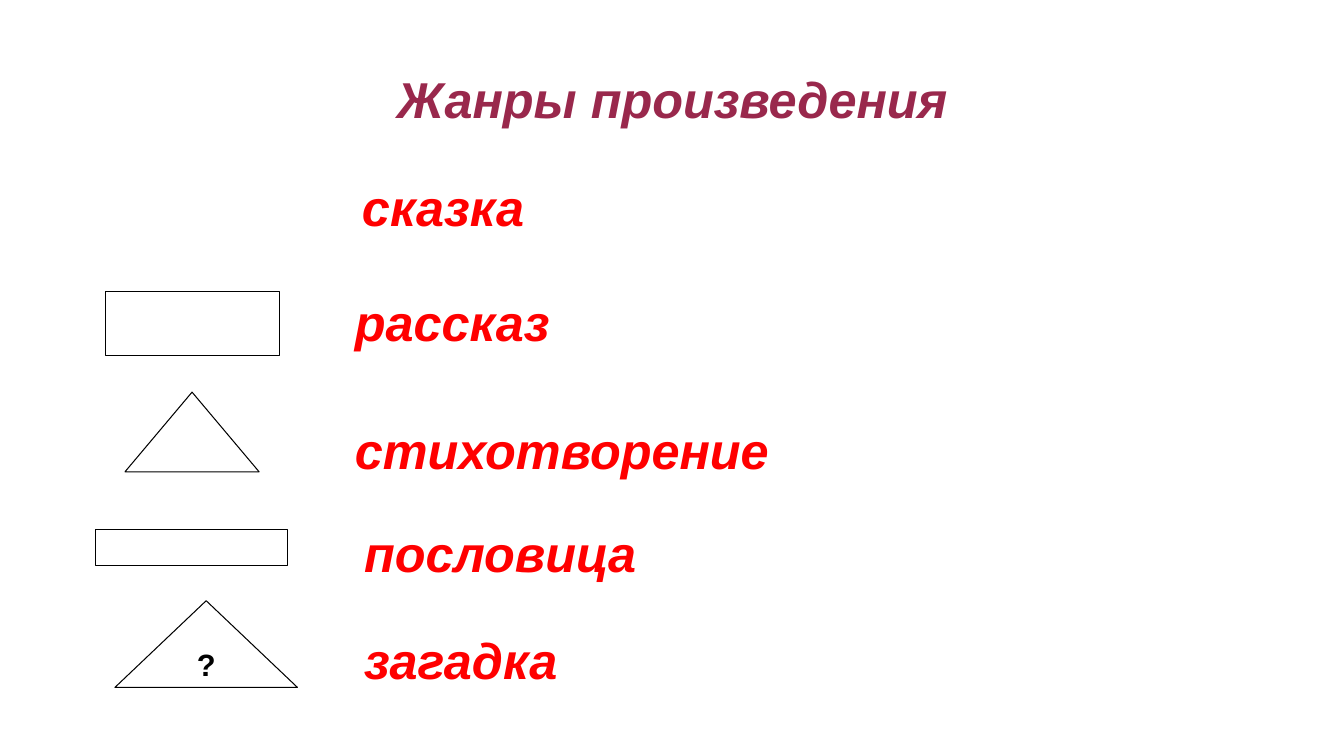
import pptx
import pptx.util
import pptx.dml.color
import pptx.enum.shapes
import pptx.enum.text

Inches = pptx.util.Inches
Pt = pptx.util.Pt
KIND = pptx.enum.shapes.MSO_SHAPE
ALIGN = pptx.enum.text.PP_ALIGN
ANCHOR = pptx.enum.text.MSO_ANCHOR

GENRES = [
    ("сказка", (3.5, 1.75, 2.98, 0.65), None, None, ""),
    ("рассказ", (3.43, 2.89, 3.24, 0.65), KIND.RECTANGLE, (1.05, 2.89, 1.72, 0.64), ""),
    ("стихотворение", (3.43, 4.16, 6, 0.65), KIND.ISOSCELES_TRIANGLE, (1.24, 3.89, 1.33, 0.79), ""),
    ("пословица", (3.52, 5.18, 4.38, 0.65), KIND.RECTANGLE, (0.95, 5.25, 1.9, 0.36), ""),
    ("загадка", (3.52, 6.25, 3.81, 0.65), KIND.ISOSCELES_TRIANGLE, (1.14, 5.96, 1.81, 0.86), "?"),
]


def color(code):
    return pptx.dml.color.RGBColor.from_string(code)


def place(box):
    return [Inches(side) for side in box]


def write(frame, text, size, code, italic=True, align=ALIGN.LEFT,
          anchor=ANCHOR.TOP, pad=(0.09, 0.05)):
    frame.word_wrap = True
    frame.vertical_anchor = anchor
    frame.margin_left = frame.margin_right = Inches(pad[0])
    frame.margin_top = frame.margin_bottom = Inches(pad[1])
    line = frame.paragraphs[0]
    line.text = text
    line.alignment = align
    line.line_spacing = 0.93
    font = line.font
    font.name = "Arial"
    font.size = Pt(size)
    font.bold = True
    font.italic = italic
    font.color.rgb = color(code)


def add_title(slide, box):
    frame = slide.shapes.add_textbox(*place(box)).text_frame
    write(frame, "Жанры произведения", 36, "99284C", align=ALIGN.CENTER,
          anchor=ANCHOR.MIDDLE, pad=(0, 0))


def add_sign(slide, kind, box, mark):
    sign = slide.shapes.add_shape(kind, *place(box))
    sign.shadow.inherit = False
    sign.fill.solid()
    sign.fill.fore_color.rgb = color("FFFFFF")
    sign.line.color.rgb = color("000000")
    sign.line.width = Pt(0.75)
    if mark:
        write(sign.text_frame, mark, 22, "000000", italic=False,
              align=ALIGN.CENTER, anchor=ANCHOR.MIDDLE)


def add_genre(slide, word, box, kind, spot, mark):
    if kind is not None:
        add_sign(slide, kind, spot, mark)
    frame = slide.shapes.add_textbox(*place(box)).text_frame
    write(frame, word, 36, "FF0000")


def main():
    deck = pptx.Presentation()
    deck.slide_width = Inches(13.33)
    deck.slide_height = Inches(7.5)
    slide = deck.slides.add_slide(deck.slide_layouts[6])
    add_title(slide, (0.98, 0.69, 11.38, 0.63))
    for genre in GENRES:
        add_genre(slide, *genre)
    deck.save("out.pptx")


if __name__ == "__main__":
    main()
